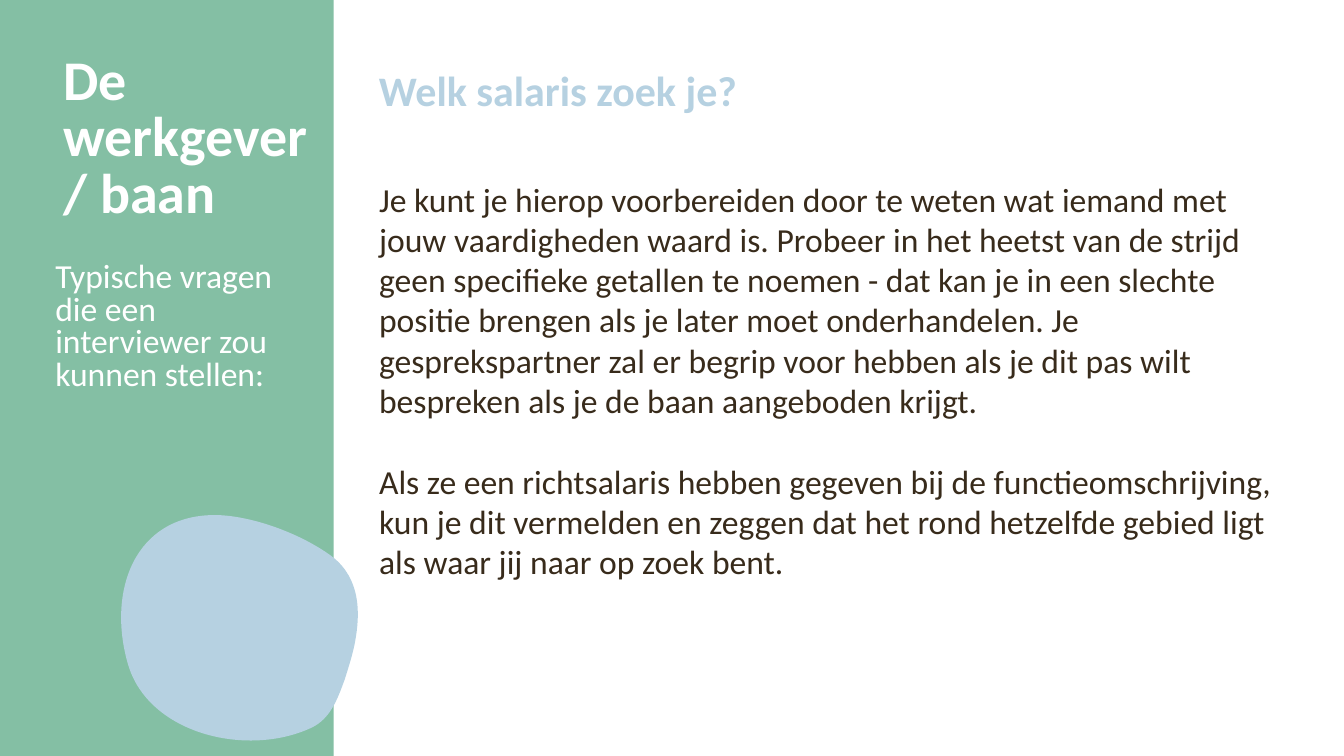
from dataclasses import dataclass

from lxml.etree import SubElement
from pptx import Presentation
from pptx.dml.color import RGBColor
from pptx.enum.shapes import MSO_SHAPE
from pptx.enum.text import MSO_ANCHOR, MSO_AUTO_SIZE, PP_ALIGN
from pptx.oxml.ns import qn
from pptx.util import Inches, Pt


@dataclass(frozen=True)
class Theme:
    font: str = "Calibri"
    green: RGBColor = RGBColor(0x84, 0xBF, 0xA4)
    blue: RGBColor = RGBColor(0xB6, 0xD1, 0xE1)
    brown: RGBColor = RGBColor(0x38, 0x2B, 0x1B)
    white: RGBColor = RGBColor(0xFF, 0xFF, 0xFF)
    title_size: int = 40
    heading_size: int = 30
    body_size: int = 24


THEME = Theme()

TITLE = "De werkgever / baan"
INTRO = "Typische vragen die een interviewer zou kunnen stellen:"
QUESTION = "Welk salaris zoek je?"
ANSWER = [
    "Je kunt je hierop voorbereiden door te weten wat iemand met jouw vaardigheden "
    "waard is. Probeer in het heetst van de strijd geen specifieke getallen te noemen - "
    "dat kan je in een slechte positie brengen als je later moet onderhandelen. Je "
    "gesprekspartner zal er begrip voor hebben als je dit pas wilt bespreken als je de "
    "baan aangeboden krijgt.",
    "Als ze een richtsalaris hebben gegeven bij de functieomschrijving, kun je dit "
    "vermelden en zeggen dat het rond hetzelfde gebied ligt als waar jij naar op zoek bent.",
]

# Pebble outline in hundredths of an inch: box size, start point, Bézier segments
PEBBLE_SIZE = (234, 224)
PEBBLE_START = (232, 121)
PEBBLE_CURVES = [
    [(237, 90), (234, 58), (204, 38)],
    [(175, 18), (130, 1), (94, 0)],
    [(12, -1), (-15, 76), (6, 148)],
    [(26, 217), (124, 241), (188, 211)],
    [(207, 202), (214, 182), (221, 163)],
    [(225, 150), (230, 135), (232, 121)],
]


def place(shape, left, top, width, height):
    shape.left, shape.top = Inches(left), Inches(top)
    shape.width, shape.height = Inches(width), Inches(height)


def paint(shape, color):
    shape.fill.solid()
    shape.fill.fore_color.rgb = color
    shape.line.fill.background()
    shape.shadow.inherit = False


def write(shape, texts, size, color, bold=False, line_spacing=None, gap=0):
    """Fill a shape with left-aligned, unbulleted paragraphs, gap points apart."""
    frame = shape.text_frame
    frame.text = "\n".join(texts)
    frame.word_wrap = True
    frame.auto_size = MSO_AUTO_SIZE.NONE
    frame.vertical_anchor = MSO_ANCHOR.TOP
    for index, paragraph in enumerate(frame.paragraphs):
        properties = paragraph._p.get_or_add_pPr()
        properties.set("marL", "0")
        properties.set("indent", "0")
        SubElement(properties, qn("a:buNone"))
        paragraph.alignment = PP_ALIGN.LEFT
        paragraph.space_before = Pt(gap if index else 0)
        if line_spacing:
            paragraph.line_spacing = line_spacing
        for run in paragraph.runs:
            font = run.font
            font.name, font.size, font.bold = THEME.font, Pt(size), bold
            font.color.rgb = color


def add_pebble(slide, left, top):
    """Draw the outline's corner points, then bend its straight sides into curves."""
    builder = slide.shapes.build_freeform(*PEBBLE_START, scale=Inches(0.01))
    builder.add_line_segments([curve[-1] for curve in PEBBLE_CURVES], close=True)
    pebble = builder.convert_to_shape()
    width, height = PEBBLE_SIZE
    place(pebble, left, top, width / 100, height / 100)
    paint(pebble, THEME.blue)

    outline = next(pebble.element.iter(qn("a:path")))
    outline.set("w", str(width))
    outline.set("h", str(height))
    for segment, points in zip(list(outline), [[PEBBLE_START], *PEBBLE_CURVES]):
        if len(points) == 3:
            segment.tag = qn("a:cubicBezTo")
        for corner in list(segment):
            segment.remove(corner)
        for x, y in points:
            SubElement(segment, qn("a:pt"), x=str(x), y=str(y))


def add_sidebar(slide, left, top, width, height):
    shapes = slide.shapes
    panel = shapes.add_shape(MSO_SHAPE.RECTANGLE, Inches(left), Inches(top),
                             Inches(width), Inches(height))
    paint(panel, THEME.green)
    shapes.element.insert(2, panel.element)  # behind the placeholders

    add_pebble(slide, left + 1.21, top + 5.11)

    title = shapes.title
    place(title, left + 0.53, top + 0.5, 2.82, 2.5)
    write(title, [TITLE], THEME.title_size, THEME.white, bold=True, line_spacing=Pt(40.2))

    intro = shapes.add_textbox(Inches(left + 0.45), Inches(top + 2.56),
                               Inches(2.63), Inches(1.97))
    write(intro, [INTRO], THEME.body_size, THEME.white, line_spacing=Pt(23.2))


def add_answer(slide, left, top, width, height):
    heading = slide.shapes.add_textbox(Inches(left), Inches(top), Inches(7.43), Inches(0.57))
    write(heading, [QUESTION], THEME.heading_size, THEME.blue, bold=True)

    body = slide.placeholders[1]
    place(body, left, top + 1.13, width, height - 1.13)
    write(body, ANSWER, THEME.body_size, THEME.brown, gap=28.8)


def main():
    presentation = Presentation()
    presentation.slide_width, presentation.slide_height = Inches(13.33), Inches(7.5)
    slide = presentation.slides.add_slide(presentation.slide_layouts[1])
    add_sidebar(slide, 0, 0, 3.31, 7.5)
    add_answer(slide, 3.66, 0.59, 9.23, 6.49)
    presentation.save("out.pptx")


if __name__ == "__main__":
    main()
